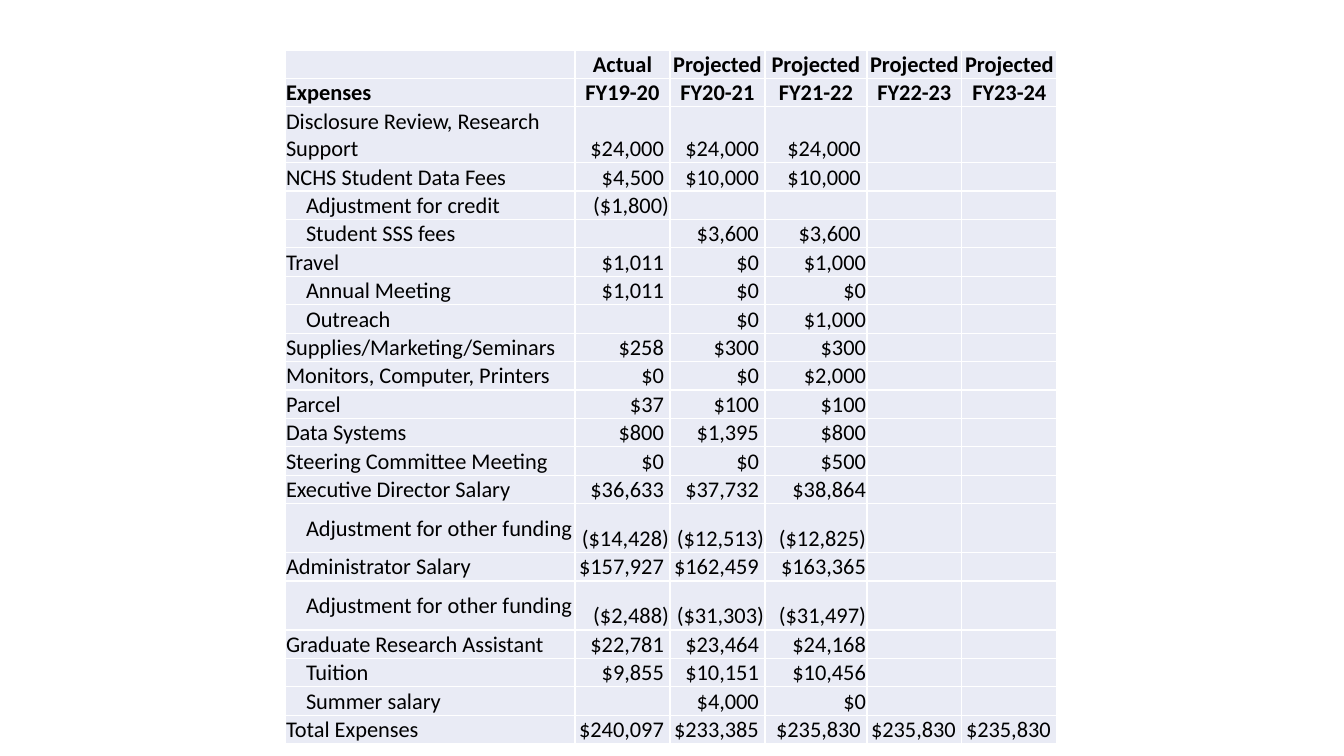
from dataclasses import dataclass

import lxml.etree
import pptx
import pptx.dml.color
import pptx.enum.text
import pptx.oxml.ns
import pptx.util

ALIGN = pptx.enum.text.PP_ALIGN
ANCHOR = pptx.enum.text.MSO_ANCHOR
BLACK = pptx.dml.color.RGBColor(0x00, 0x00, 0x00)
WHITE = pptx.dml.color.RGBColor(0xFF, 0xFF, 0xFF)
PALE_BLUE = pptx.dml.color.RGBColor(0xE9, 0xEB, 0xF5)

SLIDE_W, SLIDE_H = 1344, 756
EMU_PER_PX = 12192000 / SLIDE_W
TABLE_LEFT, TABLE_TOP = 285, 50
COLUMN_WIDTHS = (290, 95, 95, 102, 95, 95)
ROW_H, TALL_ROW_H = 25, 49
INDENT = 20
FONT = "Calibri"
FONT_SIZE = pptx.util.Pt(16)
BORDER = pptx.util.Pt(1)


@dataclass(frozen=True)
class BudgetRow:
    label: str
    values: tuple[str, ...] = ()
    header: bool = False
    indented: bool = False
    height: int = ROW_H


ROWS = (
    BudgetRow("", ("Actual",) + ("Projected",) * 4, header=True),
    BudgetRow("Expenses", ("FY19-20", "FY20-21", "FY21-22", "FY22-23", "FY23-24"), header=True),
    BudgetRow("Disclosure Review, Research Support", ("$24,000 ",) * 3, height=TALL_ROW_H),
    BudgetRow("NCHS Student Data Fees", ("$4,500 ", "$10,000 ", "$10,000 ")),
    BudgetRow("Adjustment for credit", ("($1,800)",), indented=True),
    BudgetRow("Student SSS fees", ("", "$3,600 ", "$3,600 "), indented=True),
    BudgetRow("Travel", ("$1,011 ", "$0 ", "$1,000")),
    BudgetRow("Annual Meeting", ("$1,011 ", "$0 ", "$0"), indented=True),
    BudgetRow("Outreach", ("", "$0 ", "$1,000"), indented=True),
    BudgetRow("Supplies/Marketing/Seminars", ("$258 ", "$300 ", "$300")),
    BudgetRow("Monitors, Computer, Printers", ("$0 ", "$0 ", "$2,000")),
    BudgetRow("Parcel", ("$37 ", "$100 ", "$100")),
    BudgetRow("Data Systems", ("$800 ", "$1,395 ", "$800")),
    BudgetRow("Steering Committee Meeting", ("$0 ", "$0 ", "$500")),
    BudgetRow("Executive Director Salary", ("$36,633 ", "$37,732 ", "$38,864")),
    BudgetRow("Adjustment for other funding", ("($14,428)", "($12,513)", "($12,825)"),
              indented=True, height=TALL_ROW_H),
    BudgetRow("Administrator Salary", ("$157,927 ", "$162,459 ", "$163,365")),
    BudgetRow("Adjustment for other funding", ("($2,488)", "($31,303)", "($31,497)"),
              indented=True, height=TALL_ROW_H),
    BudgetRow("Graduate Research Assistant", ("$22,781 ", "$23,464 ", "$24,168")),
    BudgetRow("Tuition", ("$9,855 ", "$10,151 ", "$10,456"), indented=True),
    BudgetRow("Summer salary", ("", "$4,000 ", "$0"), indented=True),
    BudgetRow("Total Expenses", ("$240,097 ", "$233,385 ") + ("$235,830 ",) * 3),
)


def px(n: int) -> pptx.util.Emu:
    return pptx.util.Emu(round(n * EMU_PER_PX))


def set_borders(cell) -> None:
    """Rule all four sides; border elements must come before the fill."""
    qn = pptx.oxml.ns.qn
    tc_pr = cell._tc.get_or_add_tcPr()
    for i, side in enumerate(("lnL", "lnR", "lnT", "lnB")):
        ln = lxml.etree.Element(qn(f"a:{side}"), w=str(BORDER))
        fill = lxml.etree.SubElement(ln, qn("a:solidFill"))
        lxml.etree.SubElement(fill, qn("a:srgbClr"), val=str(WHITE))
        tc_pr.insert(i, ln)


def fill_cell(cell, text: str, row: BudgetRow, is_label: bool) -> None:
    cell.fill.solid()
    cell.fill.fore_color.rgb = PALE_BLUE
    set_borders(cell)
    cell.margin_left = px(1 + INDENT * (is_label and row.indented))
    cell.margin_right = cell.margin_top = px(1)
    cell.margin_bottom = 0
    cell.vertical_anchor = ANCHOR.MIDDLE if is_label or row.header else ANCHOR.BOTTOM

    p = cell.text_frame.paragraphs[0]
    if not text:
        # The end mark keeps an empty cell from stretching its row
        lxml.etree.SubElement(p._p, pptx.oxml.ns.qn("a:endParaRPr"),
                              sz=str(FONT_SIZE.centipoints))
        return
    p.text = text
    p.alignment = ALIGN.LEFT if is_label else ALIGN.CENTER if row.header else ALIGN.RIGHT
    font = p.runs[0].font
    font.name, font.size, font.bold = FONT, FONT_SIZE, row.header
    font.color.rgb = BLACK


def add_budget_table(s) -> None:
    frame = s.shapes.add_table(
        len(ROWS), len(COLUMN_WIDTHS), px(TABLE_LEFT), px(TABLE_TOP),
        px(sum(COLUMN_WIDTHS)), px(sum(row.height for row in ROWS)))
    table = frame.table
    table.first_row = table.horz_banding = False
    for column, width in zip(table.columns, COLUMN_WIDTHS):
        column.width = px(width)
    for r, row in enumerate(ROWS):
        table.rows[r].height = px(row.height)
        texts = (row.label, *row.values)
        for c in range(len(COLUMN_WIDTHS)):
            text = texts[c] if c < len(texts) else ""
            fill_cell(table.cell(r, c), text, row, is_label=c == 0)


def main() -> None:
    prs = pptx.Presentation()
    prs.slide_width, prs.slide_height = px(SLIDE_W), px(SLIDE_H)
    s = prs.slides.add_slide(prs.slide_layouts[6])
    add_budget_table(s)
    prs.save("out.pptx")


if __name__ == "__main__":
    main()
